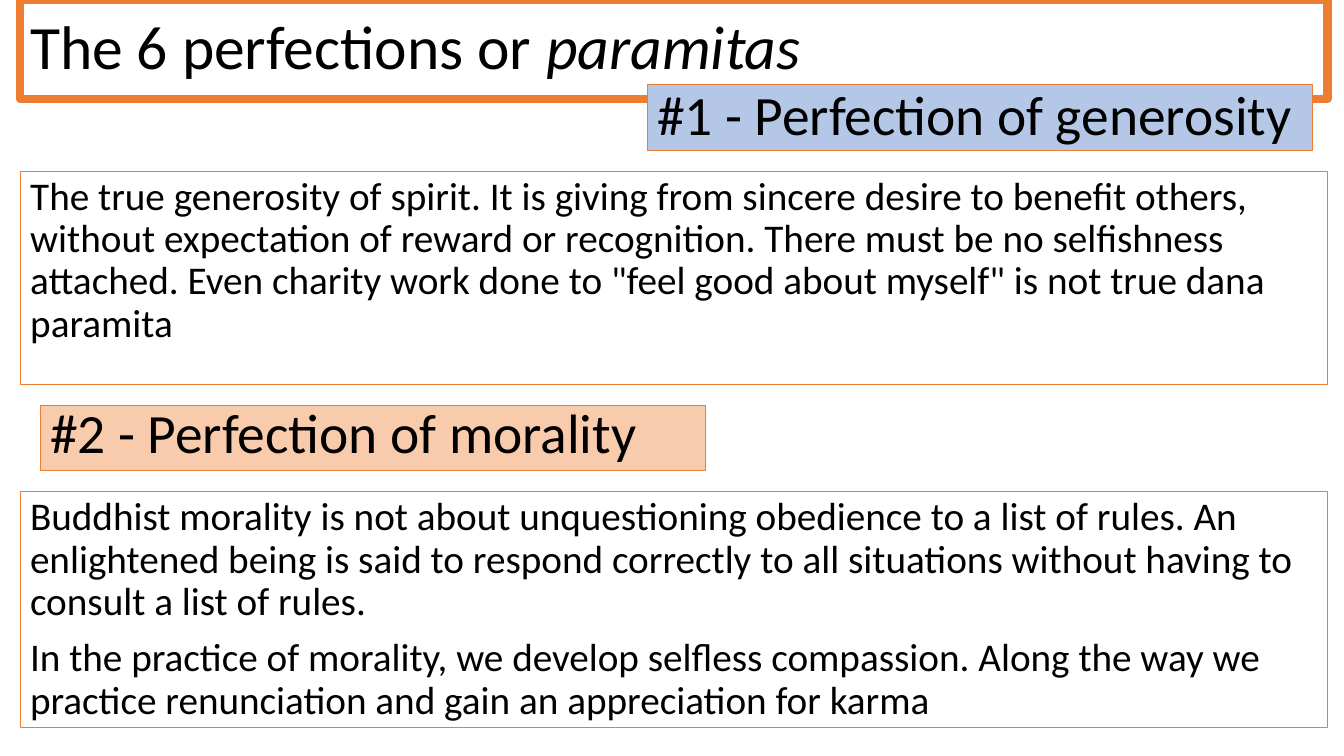
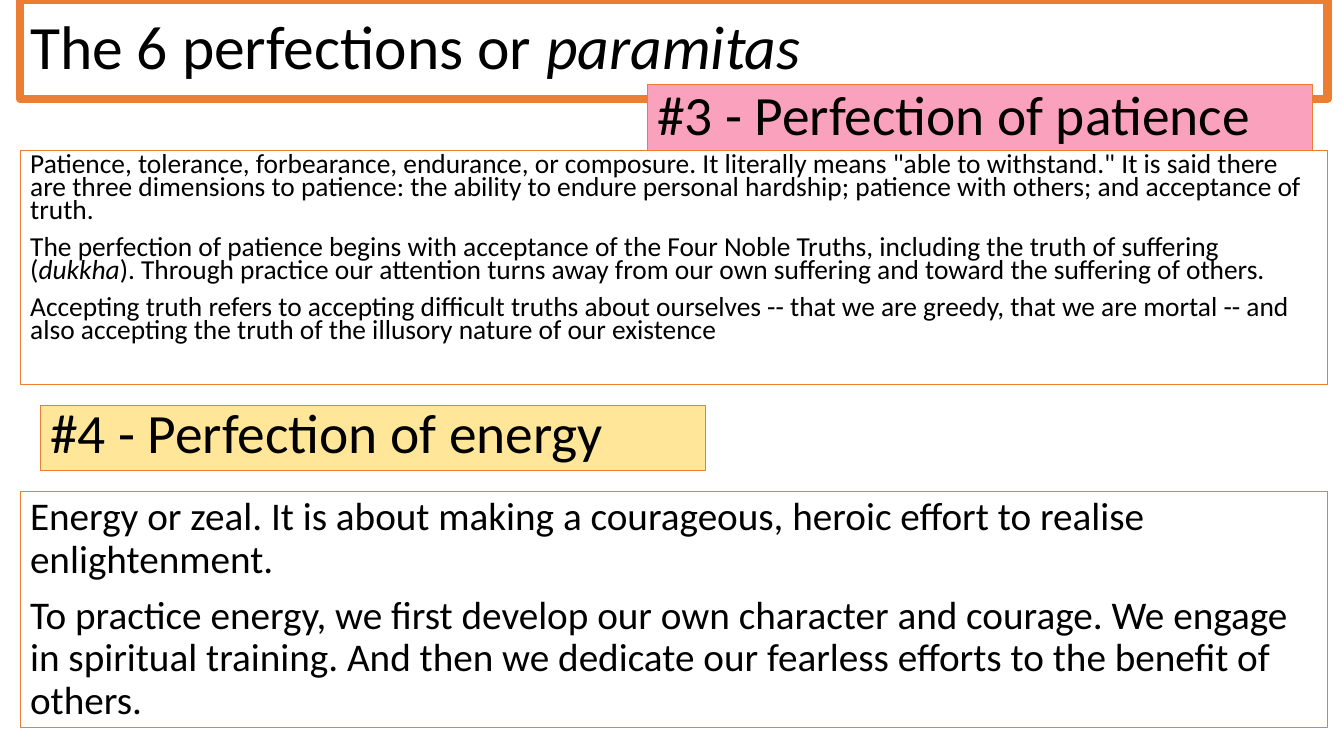
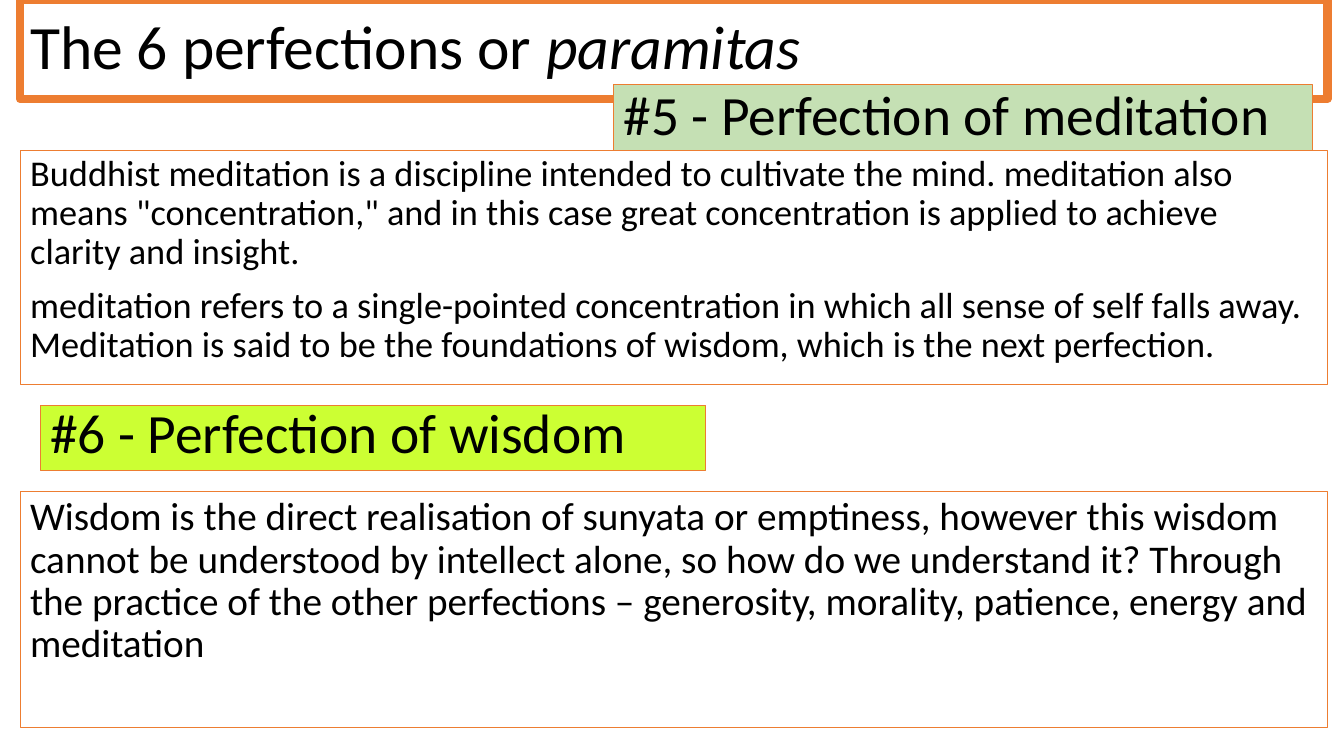
from itertools import cycle
from pptx import Presentation
from pptx.dml.color import RGBColor
from pptx.enum.text import MSO_ANCHOR as Anchor, MSO_AUTO_SIZE as AutoSize, PP_ALIGN as Align
from pptx.util import Pt
from lxml.etree import SubElement
from pptx.oxml.ns import qn

HEADING = "The 6 perfections or *paramitas*"
ORANGE, BLACK, FONT = "ED7D31", "000000", "Calibri"
MARGIN, FULL_WIDTH = 14.4, 933.8
BANNER_HEIGHT = 70.6
LABEL_HEIGHT, LABEL_RIGHT, LABEL_WIDTH = 46.8, 937.4, 475.2
UPPER_LABEL_TOP, UPPER_BOTTOM = 60.5, 275
LOWER_LABEL_TOP, LOWER_LABEL_LEFT = 289.4, 28.8
LOWER_TOP, LOWER_HEIGHT = 351.4, 168.5

SLIDES = [
    {
        "upper": {
            "label": "#1 - Perfection of generosity", "fill": "B4C7E7",
            "label_width": LABEL_WIDTH, "top": 122.4, "size": 28, "spacing": 0.9,
            "text": [
                'The true generosity of spirit. It is giving from sincere desire to benefit others, without expectation of reward or recognition. There must be no selfishness attached. Even charity work done to "feel good about myself" is not true dana paramita',
            ],
        },
        "lower": {
            "label": "#2 - Perfection of morality", "fill": "F8CBAD",
            "text": [
                "Buddhist morality is not about unquestioning obedience to a list of rules. An enlightened being is said to respond correctly to all situations without having to consult a list of rules.",
                "In the practice of morality, we develop selfless compassion. Along the way we practice renunciation and gain an appreciation for karma",
            ],
        },
    },
    {
        "upper": {
            "label": "#3 - Perfection of patience", "fill": "FAA2BD",
            "label_width": LABEL_WIDTH, "top": 107.3, "size": 19.6, "spacing": 0.7,
            "text": [
                'Patience, tolerance, forbearance, endurance, or composure. It literally means "able to withstand." It is said there are three dimensions to patience: the ability to endure personal hardship; patience with others; and acceptance of truth.',
                "The perfection of patience begins with acceptance of the Four Noble Truths, including the truth of suffering (*dukkha*). Through practice our attention turns away from our own suffering and toward the suffering of others.",
                "Accepting truth refers to accepting difficult truths about ourselves -- that we are greedy, that we are mortal -- and also accepting the truth of the illusory nature of our existence",
            ],
        },
        "lower": {
            "label": "#4 - Perfection of energy", "fill": "FFE699",
            "text": [
                "Energy or zeal. It is about making a courageous, heroic effort to realise enlightenment.",
                "To practice energy, we first develop our own character and courage. We engage in spiritual training. And then we dedicate our fearless efforts to the benefit of others.",
            ],
        },
    },
    {
        "upper": {
            "label": "#5 - Perfection of meditation", "fill": "C5E0B4",
            "label_width": 499.2, "top": 107.3, "size": 25.9, "spacing": 0.9,
            "text": [
                'Buddhist meditation is a discipline intended to cultivate the mind. meditation also means "concentration," and in this case great concentration is applied to achieve clarity and insight.',
                "meditation refers to a single-pointed concentration in which all sense of self falls away. Meditation is said to be the foundations of wisdom, which is the next perfection.",
            ],
        },
        "lower": {
            "label": "#6 - Perfection of wisdom", "fill": "CCFF33",
            "text": [
                "Wisdom is the direct realisation of sunyata or emptiness, however this wisdom cannot be understood by intellect alone, so how do we understand it? Through the practice of the other perfections – generosity, morality, patience, energy and meditation",
            ],
        },
    },
]


def color(hex_code):
    return RGBColor.from_string(hex_code)


def frame(box, place, fill=None, line_width=0.75):
    box.left, box.top, box.width, box.height = map(Pt, place)
    if fill:
        box.fill.solid()
        box.fill.fore_color.rgb = color(fill)
    else:
        box.fill.background()
    box.line.color.rgb = color(ORANGE)
    box.line.width = Pt(line_width)


def write(box, paragraphs, size, spacing=0.9, before=0, anchor=Anchor.MIDDLE):
    """Fill a box with paragraphs, setting the words between asterisks in italics."""
    text_frame = box.text_frame
    text_frame.word_wrap = True
    text_frame.auto_size = AutoSize.NONE
    text_frame.vertical_anchor = anchor
    for index, text in enumerate(paragraphs):
        paragraph = text_frame.add_paragraph() if index else text_frame.paragraphs[0]
        paragraph.alignment = Align.LEFT
        paragraph.line_spacing = spacing
        paragraph.space_before = Pt(before)
        properties = paragraph._p.get_or_add_pPr()
        properties.set("marL", "0")
        properties.set("indent", "0")
        SubElement(properties, qn("a:buNone"))
        for words, italic in zip(text.split("*"), cycle((False, True))):
            if words:
                run = paragraph.add_run()
                run.text = words
                run.font.name = FONT
                run.font.size = Pt(size)
                run.font.italic = italic
                run.font.color.rgb = color(BLACK)


def add_box(slide):
    return slide.shapes.add_textbox(0, 0, 0, 0)


def add_label(label, perfection, left, top, width, spacing):
    frame(label, (left, top, width, LABEL_HEIGHT), perfection["fill"])
    write(label, [perfection["label"]], 39.6, spacing)


def add_description(description, perfection, top, height, size=28, spacing=0.9):
    frame(description, (MARGIN, top, FULL_WIDTH, height))
    write(description, perfection["text"], size, spacing, 10, Anchor.TOP)


def build_slide(deck, upper, lower):
    slide = deck.slides.add_slide(deck.slide_layouts[1])
    title, body = slide.placeholders
    add_description(body, upper, upper["top"], UPPER_BOTTOM - upper["top"],
                    upper["size"], upper["spacing"])

    banner = add_box(slide)
    frame(banner, (MARGIN, 0, FULL_WIDTH, BANNER_HEIGHT), line_width=6)
    write(banner, [HEADING], 44)

    banner._element.addnext(title._element)
    width = upper["label_width"]
    add_label(title, upper, LABEL_RIGHT - width, UPPER_LABEL_TOP, width, 0.9)
    add_label(add_box(slide), lower, LOWER_LABEL_LEFT, LOWER_LABEL_TOP, LABEL_WIDTH, 0.8)
    add_description(add_box(slide), lower, LOWER_TOP, LOWER_HEIGHT)


def main():
    deck = Presentation()
    deck.slide_width, deck.slide_height = Pt(960), Pt(540)
    for perfections in SLIDES:
        build_slide(deck, **perfections)
    deck.save("out.pptx")


if __name__ == "__main__":
    main()
